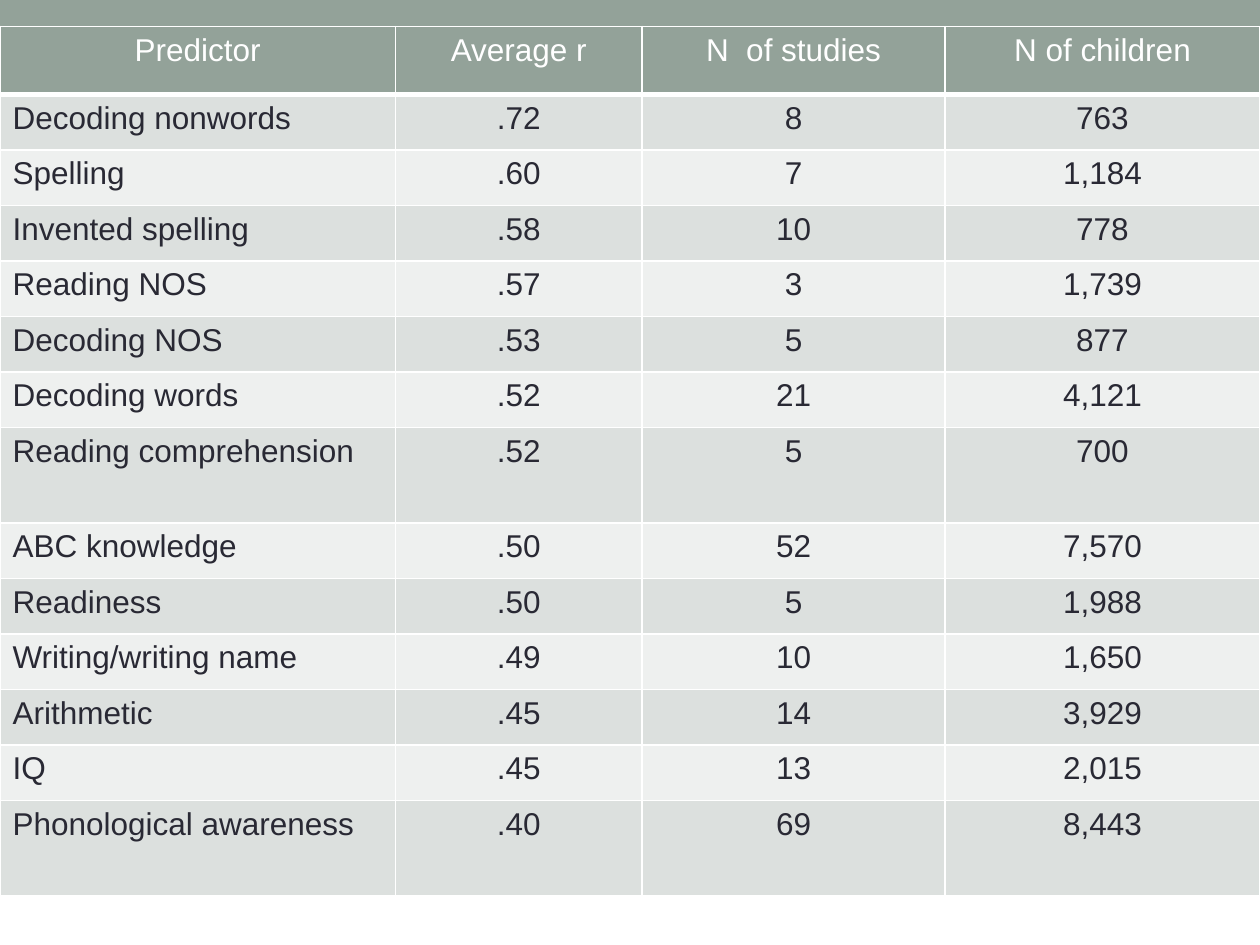
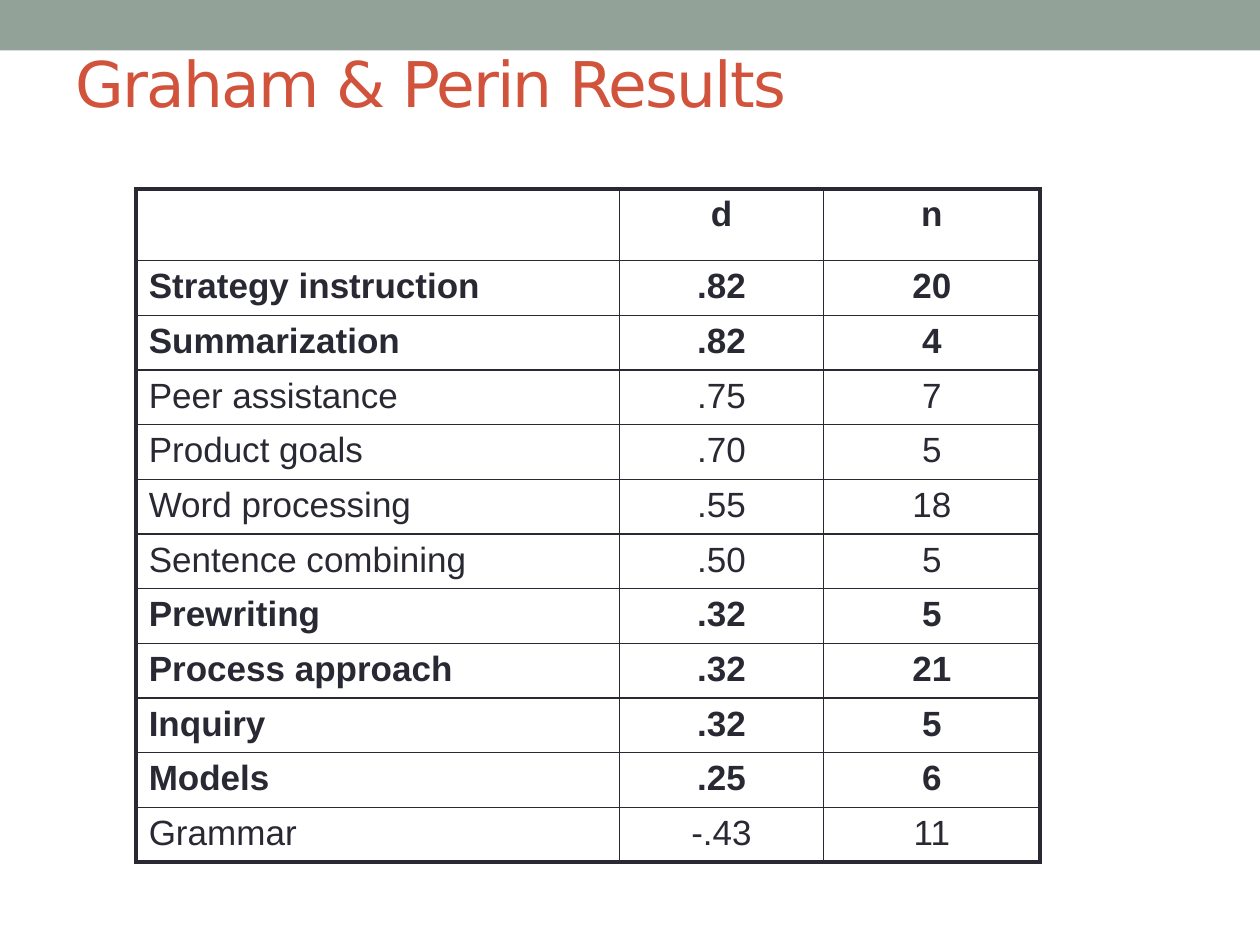
from lxml.etree import SubElement
from pptx import Presentation
from pptx.dml.color import RGBColor
from pptx.enum.shapes import MSO_SHAPE
from pptx.enum.text import MSO_ANCHOR, PP_ALIGN
from pptx.oxml.ns import qn
from pptx.util import Pt

SAGE = RGBColor(0x93, 0xA2, 0x99)
SAGE_MID = RGBColor(0xDC, 0xE0, 0xDE)
SAGE_PALE = RGBColor(0xEE, 0xF0, 0xEF)
INK = RGBColor(0x29, 0x29, 0x34)
RUST = RGBColor(0xD2, 0x53, 0x3C)
WHITE = RGBColor(0xFF, 0xFF, 0xFF)

PREDICTORS = [
    ("Predictor", "Average r", "N  of studies", "N of children"),
    ("Decoding nonwords", ".72", "8", "763"),
    ("Spelling", ".60", "7", "1,184"),
    ("Invented spelling", ".58", "10", "778"),
    ("Reading NOS", ".57", "3", "1,739"),
    ("Decoding NOS", ".53", "5", "877"),
    ("Decoding words", ".52", "21", "4,121"),
    ("Reading comprehension", ".52", "5", "700"),
    ("ABC knowledge", ".50", "52", "7,570"),
    ("Readiness", ".50", "5", "1,988"),
    ("Writing/writing name", ".49", "10", "1,650"),
    ("Arithmetic", ".45", "14", "3,929"),
    ("IQ", ".45", "13", "2,015"),
    ("Phonological awareness", ".40", "69", "8,443"),
]
TALL_PREDICTORS = {"Reading comprehension", "Phonological awareness"}

WRITING_RESULTS = [
    ("", "d", "n"),
    ("Strategy instruction", ".82", "20"),
    ("Summarization", ".82", "4"),
    ("Peer assistance", ".75", "7"),
    ("Product goals", ".70", "5"),
    ("Word processing", ".55", "18"),
    ("Sentence combining", ".50", "5"),
    ("Prewriting", ".32", "5"),
    ("Process approach", ".32", "21"),
    ("Inquiry", ".32", "5"),
    ("Models", ".25", "6"),
    ("Grammar", "-.43", "11"),
]
BOLD_RESULTS = {"", "Strategy instruction", "Summarization", "Prewriting",
                "Process approach", "Inquiry", "Models"}


class Deck:
    """Presentation style together with the slide being filled."""

    def __init__(self):
        self.presentation = Presentation()
        self.presentation.slide_width = Pt(720)
        self.presentation.slide_height = Pt(540)
        self.slide = None

    def new_slide(self):
        self.slide = self.presentation.slides.add_slide(self.presentation.slide_layouts[6])
        self.slide.background.fill.solid()
        self.slide.background.fill.fore_color.rgb = WHITE
        band = self.slide.shapes.add_shape(MSO_SHAPE.RECTANGLE, 0, 0, Pt(720), Pt(28.8))
        band.shadow.inherit = False
        band.fill.solid()
        band.fill.fore_color.rgb = SAGE
        band.line.fill.background()

    def style(self, paragraph, size, color, bold=False, face="Arial"):
        font = paragraph.font
        font.name, font.size, font.bold = face, Pt(size), bold
        font.color.rgb = color

    def title(self, wording):
        frame = self.slide.shapes.add_textbox(Pt(36), Pt(21.6), Pt(648), Pt(50.4)).text_frame
        frame.word_wrap = True
        frame.vertical_anchor = MSO_ANCHOR.MIDDLE
        heading = frame.paragraphs[0]
        run = heading.add_run()
        run.text = wording
        run.font._element.set("spc", "-100")
        self.style(heading, 36, RUST, face="DejaVu Sans")

    def table(self, left, top, widths, heights, rows):
        grid = self.slide.shapes.add_table(
            len(rows), len(widths), Pt(left), Pt(top), Pt(sum(widths)), Pt(sum(heights))).table
        grid.first_row = grid.horz_banding = False
        for column, width in zip(grid.columns, widths):
            column.width = Pt(width)
        for row, height in zip(grid.rows, heights):
            row.height = Pt(height)
        for row, values in zip(grid.rows, rows):
            for position, (cell, value) in enumerate(zip(row.cells, values)):
                cell.text = value
                if position:
                    cell.text_frame.paragraphs[0].alignment = PP_ALIGN.CENTER
        return grid

    def fill(self, cell, color=None):
        if color is None:
            cell.fill.background()
        else:
            cell.fill.solid()
            cell.fill.fore_color.rgb = color

    def borders(self, cell, color, left=1, right=1, top=1, bottom=1):
        properties = cell._tc.get_or_add_tcPr()
        sides = zip(("lnL", "lnR", "lnT", "lnB"), (left, right, top, bottom))
        for place, (side, weight) in enumerate(sides):
            edge = SubElement(properties, qn(f"a:{side}"), w=str(Pt(weight)))
            paint = SubElement(edge, qn("a:solidFill"))
            SubElement(paint, qn("a:srgbClr"), val=str(color))
            properties.insert(place, edge)


def predictors_slide(deck):
    deck.new_slide()
    heights = [38.9] + [54.7 if row[0] in TALL_PREDICTORS else 31.7 for row in PREDICTORS[1:]]
    grid = deck.table(0, 15.1, [225.9, 141.1, 173, 180], heights, PREDICTORS)
    for index, row in enumerate(grid.rows):
        header = index == 0
        shade = SAGE if header else (SAGE_PALE, SAGE_MID)[index % 2]
        for cell in row.cells:
            paragraph = cell.text_frame.paragraphs[0]
            deck.style(paragraph, 18, WHITE if header else INK)
            if header:
                paragraph.alignment = PP_ALIGN.CENTER
            deck.fill(cell, shade)
            deck.borders(cell, WHITE, bottom=3 if header else 1)


def writing_results_slide(deck):
    deck.new_slide()
    deck.title("Graham & Perin Results")
    heights = [41] + [31.2] * (len(WRITING_RESULTS) - 1)
    grid = deck.table(77.8, 108, [276.2, 116.6, 123.8], heights, WRITING_RESULTS)
    last_row, last_column = len(grid.rows) - 1, len(grid.columns) - 1

    def weight(outer):
        return 2.25 if outer else 1

    for index, row in enumerate(grid.rows):
        bold = WRITING_RESULTS[index][0] in BOLD_RESULTS
        for position, cell in enumerate(row.cells):
            deck.style(cell.text_frame.paragraphs[0], 20, INK, bold)
            deck.fill(cell)
            deck.borders(cell, INK, weight(position == 0), weight(position == last_column),
                         weight(index == 0), weight(index == last_row))


def main():
    deck = Deck()
    predictors_slide(deck)
    writing_results_slide(deck)
    deck.presentation.save("out.pptx")


if __name__ == "__main__":
    main()
